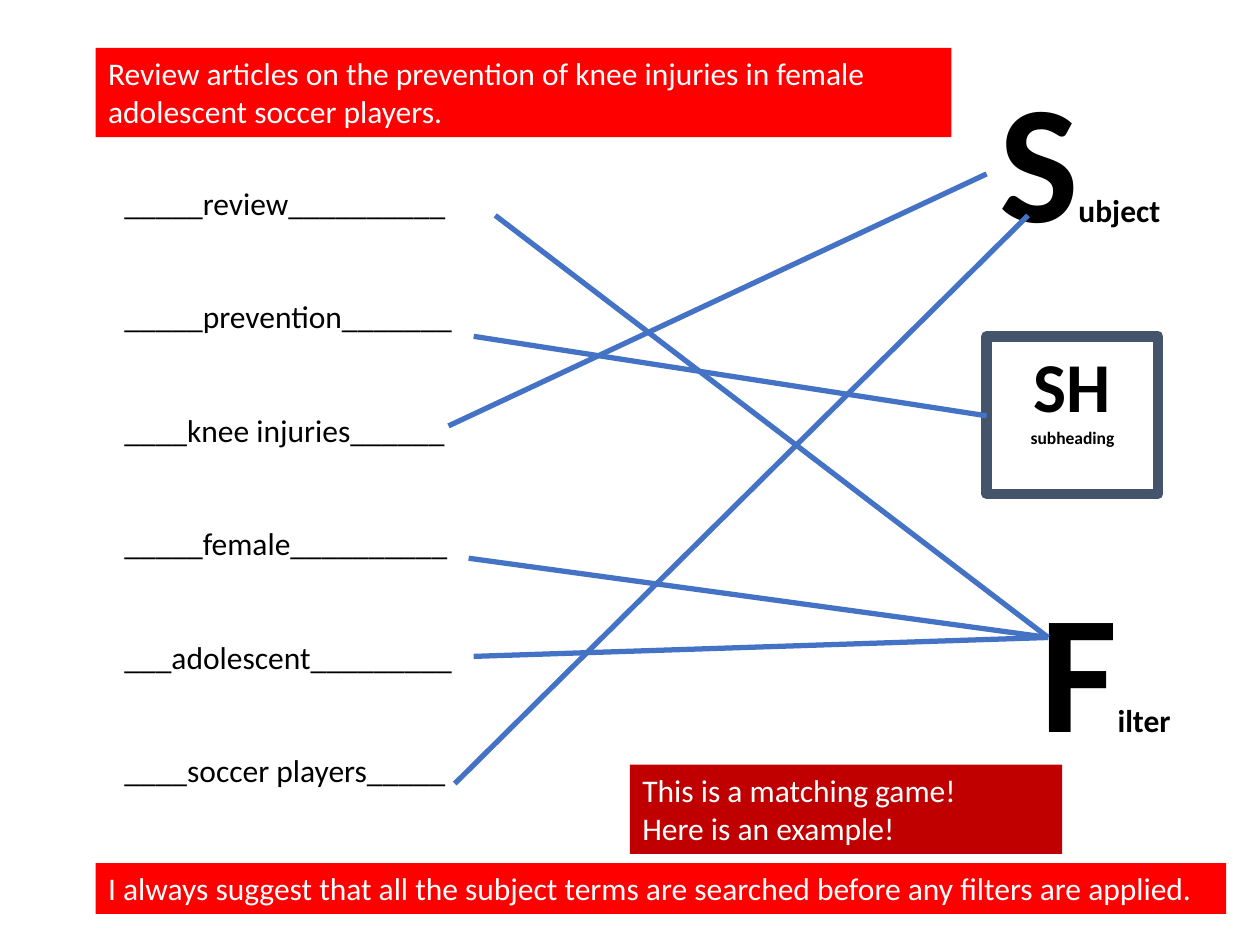
from lxml import etree
from pptx import Presentation
from pptx.dml.color import RGBColor
from pptx.enum.shapes import MSO_CONNECTOR, MSO_SHAPE
from pptx.enum.text import MSO_ANCHOR, PP_ALIGN
from pptx.oxml.ns import qn
from pptx.util import Pt

STRAIGHT = MSO_CONNECTOR.STRAIGHT
RECTANGLE = MSO_SHAPE.RECTANGLE
TOP = MSO_ANCHOR.TOP
LEFT, CENTER = PP_ALIGN.LEFT, PP_ALIGN.CENTER

FONT = "Calibri"
BODY = 18
BLACK, WHITE = "000000", "FFFFFF"
RED, DARK_RED = "FF0000", "C00000"
SLATE, BLUE = "44546A", "4472C4"

TERMS = [
    "_____review__________",
    "_____prevention_______",
    "____knee injuries______",
    "_____female__________",
    "___adolescent_________",
    "____soccer players_____",
]
TERM_GAP = 43.2

SUBJECT_SIDE = (563.8, 99.4)
SUBJECT_FOOT = (587.5, 123.1)
SUBHEADING = (563.8, 237.6)
FILTER = (599, 364.3)
MATCHES = [
    ((283, 123.1), FILTER),
    ((267.8, 319), FILTER),
    ((270.7, 192.2), SUBHEADING),
    ((256.3, 243.4), SUBJECT_SIDE),
    ((270.7, 375.1), FILTER),
    ((259.9, 447.8), SUBJECT_FOOT),
]


def color(value):
    return RGBColor.from_string(value)


def add_span(para, text, size, ink, bold=False):
    span = para.add_run()
    span.text = text
    span.font.name = FONT
    span.font.size = Pt(size)
    span.font.bold = bold
    span.font.color.rgb = color(ink)


def add_paragraphs(box, lines, ink):
    frame = box.text_frame
    frame.word_wrap = True
    frame.vertical_anchor = TOP
    for index, line in enumerate(lines):
        para = frame.add_paragraph() if index else frame.paragraphs[0]
        para.alignment = LEFT
        add_span(para, line, BODY, ink)
    return frame


def add_rectangle(page, place):
    box = page.shapes.add_shape(RECTANGLE, *map(Pt, place))
    box.shadow.inherit = False
    return box


def add_banner(page, place, fill, lines):
    box = add_rectangle(page, place)
    box.fill.solid()
    box.fill.fore_color.rgb = color(fill)
    box.line.fill.background()
    add_paragraphs(box, lines, WHITE)


def add_big_initial(page, place, initial, rest):
    frame = page.shapes.add_textbox(*map(Pt, place)).text_frame
    frame.word_wrap = False
    para = frame.paragraphs[0]
    add_span(para, initial, 96, BLACK, True)
    add_span(para, rest, BODY, BLACK, True)


def add_subheading_box(page, place):
    box = add_rectangle(page, place)
    box.fill.background()
    box.line.color.rgb = color(SLATE)
    box.line.width = Pt(6)
    frame = box.text_frame
    frame.word_wrap = True
    frame.vertical_anchor = TOP
    para = frame.paragraphs[0]
    para.alignment = CENTER
    add_span(para, "SH ", 40, BLACK, True)
    add_span(para, "subheading", 10, BLACK, True)


def add_terms(page, place):
    box = page.shapes.add_textbox(*map(Pt, place))
    frame = add_paragraphs(box, TERMS, BLACK)
    frame.margin_top = Pt(25.2)
    for para in frame.paragraphs:
        para.space_after = Pt(TERM_GAP)


def add_match(page, start, end):
    match = page.shapes.add_connector(STRAIGHT, *map(Pt, start + end))
    match.line.color.rgb = color(BLUE)
    match.line.width = Pt(3)
    etree.SubElement(match._element.spPr, qn("a:effectLst"))


def main():
    deck = Presentation()
    deck.slide_width, deck.slide_height = Pt(720), Pt(540)
    page = deck.slides.add_slide(deck.slide_layouts[6])

    add_big_initial(page, (563.8, 27.4, 107.3, 145.4), "S", "ubject")
    add_subheading_box(page, (563.8, 192.2, 98, 90))
    add_big_initial(page, (587.5, 319, 89.3, 145.4), "F", "ilter")
    add_banner(page, (54.7, 27.4, 489, 51), RED, [
        "Review articles on the prevention of knee injuries in female "
        "adolescent soccer players."])
    add_terms(page, (64, 80, 204, 378))
    for start, end in MATCHES:
        add_match(page, start, end)
    add_banner(page, (54.7, 493.2, 646, 29), RED, [
        "I always suggest that all the subject terms are searched "
        "before any filters are applied."])
    add_banner(page, (360, 437, 247, 51), DARK_RED, [
        "This is a matching game!", "Here is an example!"])

    deck.save("out.pptx")


if __name__ == "__main__":
    main()
